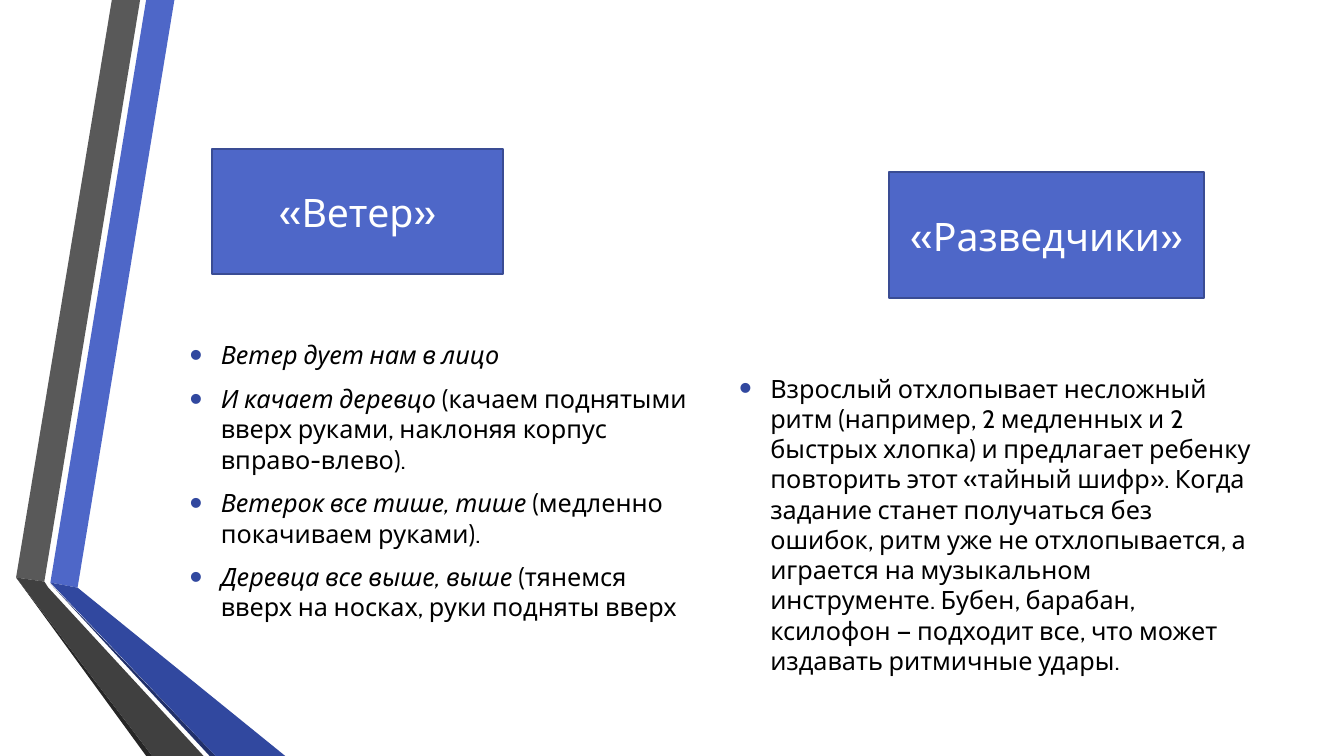
from dataclasses import dataclass

from lxml.etree import SubElement
from pptx import Presentation
from pptx.dml.color import RGBColor
from pptx.enum.shapes import MSO_SHAPE as Shape
from pptx.enum.text import MSO_ANCHOR as Anchor, MSO_AUTO_SIZE as AutoSize, PP_ALIGN as Align
from pptx.oxml.ns import qn
from pptx.util import Inches, Pt

# Content: paragraphs are lists of (text, italic) runs
WIND = [
    [("Ветер дует нам в лицо", True)],
    [("И качает деревцо", True),
     (" (качаем поднятыми вверх руками, наклоняя корпус вправо-влево).", False)],
    [("Ветерок все тише, тише", True), (" (медленно покачиваем руками).", False)],
    [("Деревца все выше, выше", True),
     (" (тянемся вверх на носках, руки подняты вверх", False)],
]
SCOUTS = [
    [("Взрослый отхлопывает несложный ритм (например, 2 медленных и 2 быстрых хлопка) "
      "и предлагает ребенку повторить этот «тайный шифр». Когда задание станет "
      "получаться без ошибок, ритм уже не отхлопывается, а играется на музыкальном "
      "инструменте. Бубен, барабан, ксилофон — подходит все, что может издавать "
      "ритмичные удары.", False)],
]

# Games: heading, heading box, paragraphs, body box (left, top, width, height)
GAMES = [
    ("«Ветер»", (2.1, 1.48, 2.89, 1.24), WIND, (1.78, 3.32, 5.2, 3.02)),
    ("«Разведчики»", (8.82, 1.71, 3.12, 1.25), SCOUTS, (7.23, 3.65, 5.35, 2.69)),
]


@dataclass(frozen=True)
class Theme:
    font: str = "Cabin"
    heading_size: int = 28
    body_size: int = 18
    blue: str = "4E67C8"
    blue_line: str = "3A4C94"
    blue_dark: str = "31489F"
    blue_edge: str = "21306A"
    grey: str = "595959"
    grey_dark: str = "404040"
    grey_edge: str = "262626"
    black: str = "000000"
    white: str = "FFFFFF"


theme = Theme()

# Folded ribbons: colour and outline
RIBBONS = [
    (theme.blue, [(0.5, 5.78), (0.77, 5.83), (1.73, 0), (1.45, 0)]),
    (theme.grey, [(1.39, 0), (1.11, 0), (0.16, 5.73), (0.44, 5.77)]),
    (theme.grey_edge, [(0.16, 5.73), (1.45, 7.5), (1.51, 7.5)]),
    (theme.blue_edge, [(0.5, 5.79), (2.08, 7.5), (2.14, 7.5)]),
    (theme.blue_dark, [(0.5, 5.78), (2.14, 7.5), (2.83, 7.5), (0.77, 5.83)]),
    (theme.grey_dark, [(2.02, 7.5), (0.48, 5.83), (0.44, 5.77), (0.16, 5.73), (1.51, 7.5)]),
]


def paint(shape, color):
    shape.shadow.inherit = False
    shape.fill.solid()
    shape.fill.fore_color.rgb = RGBColor.from_string(color)


def add_run(paragraph, text, size, color, italic=False):
    run = paragraph.add_run()
    run.text = text
    run.font.name = theme.font
    run.font.size = Pt(size)
    run.font.italic = italic
    run.font.color.rgb = RGBColor.from_string(color)


def add_bullet(paragraph):
    properties = paragraph._p.get_or_add_pPr()
    properties.set("marL", str(Inches(0.31)))
    properties.set("indent", str(-Inches(0.31)))
    bullet_color = SubElement(properties, qn("a:buClr"))
    SubElement(bullet_color, qn("a:srgbClr"), val=theme.blue_dark)
    SubElement(properties, qn("a:buSzPct"), val="145000")
    SubElement(properties, qn("a:buFont"), typeface="Arial")
    SubElement(properties, qn("a:buChar"), char="•")


def add_ribbon(slide, color, outline):
    points = [(Inches(x), Inches(y)) for x, y in outline]
    builder = slide.shapes.build_freeform(*points[0])
    builder.add_line_segments(points[1:], close=True)
    ribbon = builder.convert_to_shape()
    paint(ribbon, color)
    ribbon.line.fill.background()


def add_heading(slide, text, box):
    heading = slide.shapes.add_shape(Shape.RECTANGLE, *map(Inches, box))
    paint(heading, theme.blue)
    heading.line.color.rgb = RGBColor.from_string(theme.blue_line)
    heading.line.width = Pt(1.25)
    frame = heading.text_frame
    frame.word_wrap = True
    frame.vertical_anchor = Anchor.MIDDLE
    paragraph = frame.paragraphs[0]
    paragraph.alignment = Align.CENTER
    add_run(paragraph, text, theme.heading_size, theme.white)


def fill_body(body, paragraphs, box):
    body.left, body.top, body.width, body.height = map(Inches, box)
    frame = body.text_frame
    frame.word_wrap = True
    frame.auto_size = AutoSize.NONE
    frame.vertical_anchor = Anchor.TOP
    for index, runs in enumerate(paragraphs):
        paragraph = frame.add_paragraph() if index else frame.paragraphs[0]
        paragraph.space_before = Pt(0.2 * theme.body_size)
        paragraph.space_after = Pt(6)
        add_bullet(paragraph)
        for text, italic in runs:
            add_run(paragraph, text, theme.body_size, theme.black, italic)


def main():
    presentation = Presentation()
    presentation.slide_width = Inches(13.33)
    presentation.slide_height = Inches(7.5)
    two_content = presentation.slide_layouts[3]
    slide = presentation.slides.add_slide(two_content)

    # The slide has two headings and no title
    title, *bodies = slide.placeholders
    title._element.getparent().remove(title._element)

    # Decoration
    for color, outline in RIBBONS:
        add_ribbon(slide, color, outline)

    # Games
    for body, (heading, heading_box, paragraphs, body_box) in zip(bodies, GAMES):
        fill_body(body, paragraphs, body_box)
        add_heading(slide, heading, heading_box)

    presentation.save("out.pptx")


if __name__ == "__main__":
    main()
